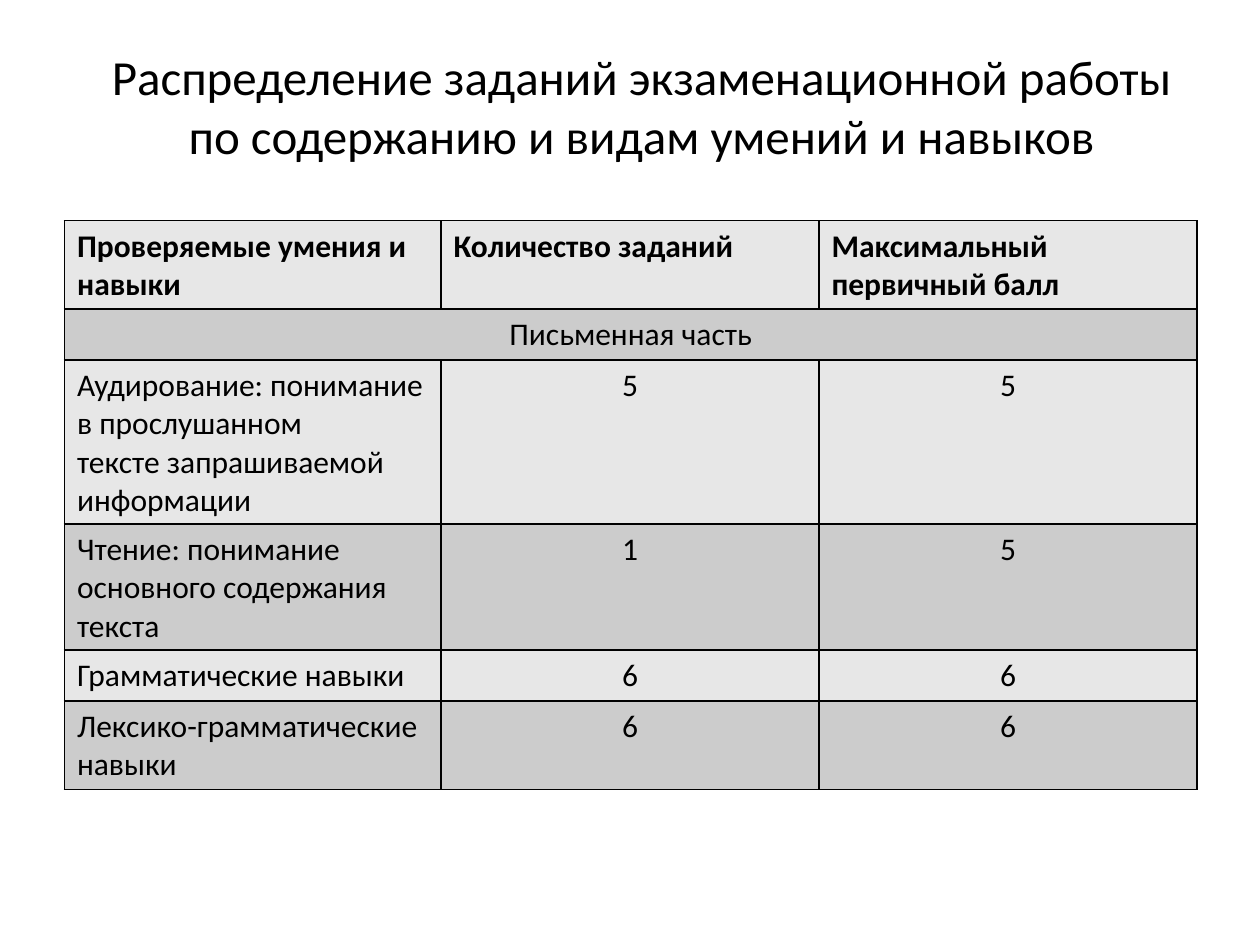
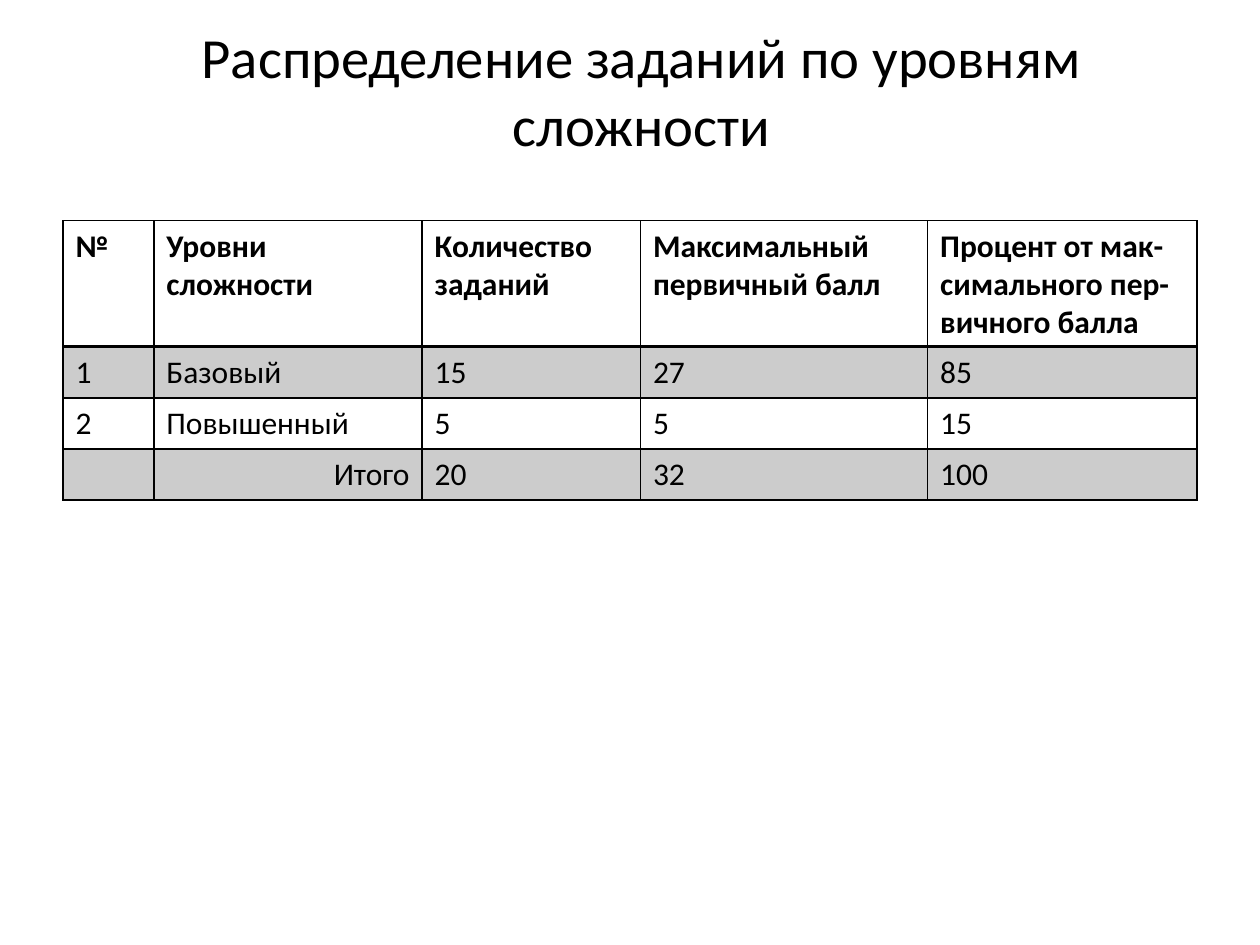
"""Build two slides on how exam tasks are spread by skill and by level."""
from dataclasses import dataclass, field

from lxml.etree import SubElement
from pptx import Presentation
from pptx.dml.color import RGBColor
from pptx.enum.text import MSO_ANCHOR, PP_ALIGN
from pptx.oxml.ns import qn
from pptx.slide import Slide
from pptx.table import _Cell
from pptx.text.text import TextFrame
from pptx.util import Cm, Pt

HUES = {"ink": "000000", "light": "E7E7E7", "dark": "CCCCCC"}
FONT = "Calibri"
ROW = 1.03


@dataclass
class Title:
    text: str
    top: float
    size: float


@dataclass
class Grid:
    left: float
    cols: list[float]
    rows: list[list[str]]
    fills: list[str | None]
    high: float
    rule: float = 1
    wide: list[int] = field(default_factory=list)
    sides: dict[tuple[int, int], PP_ALIGN] = field(default_factory=dict)


def write(frame: TextFrame, text: str, *, size: float = 18, bold: bool = False,
          side: PP_ALIGN = PP_ALIGN.LEFT) -> None:
    for num, line in enumerate(text.split("\n")):
        para = frame.add_paragraph() if num else frame.paragraphs[0]
        para.text = line
        para.alignment = side
        for run in para.runs:
            run.font.name = FONT
            run.font.size = Pt(size)
            run.font.bold = bold
            run.font.color.rgb = RGBColor.from_string(HUES["ink"])


def edge(cell: _Cell, over: float, under: float) -> None:
    props = cell._tc.get_or_add_tcPr()
    for tag, width in (("lnL", 1), ("lnR", 1), ("lnT", over), ("lnB", under)):
        line = SubElement(props, qn(f"a:{tag}"), w=str(Pt(width)))
        fill = SubElement(line, qn("a:solidFill"))
        SubElement(fill, qn("a:srgbClr"), val=HUES["ink"])


def paint(cell: _Cell, hue: str | None) -> None:
    if hue:
        cell.fill.solid()
        cell.fill.fore_color.rgb = RGBColor.from_string(HUES[hue])
    else:
        cell.fill.background()


def draw_title(slide: Slide, title: Title) -> None:
    box = slide.shapes.add_textbox(Cm(1.5), Cm(title.top), Cm(22.86), Cm(3.18))
    box.text_frame.word_wrap = True
    box.text_frame.vertical_anchor = MSO_ANCHOR.MIDDLE
    write(box.text_frame, title.text, size=title.size, side=PP_ALIGN.CENTER)


def draw_grid(slide: Slide, grid: Grid) -> None:
    frame = slide.shapes.add_table(
        len(grid.rows), len(grid.cols), Cm(grid.left), Cm(4.45),
        Cm(sum(grid.cols)), Cm(ROW * len(grid.rows)))
    table = frame.table
    table.horz_banding = False
    for col, width in zip(table.columns, grid.cols):
        col.width = Cm(width)
    for row, texts in enumerate(grid.rows):
        table.rows[row].height = Cm(ROW)
        for col in range(len(grid.cols)):
            cell = table.cell(row, col)
            edge(cell, grid.rule if row == 1 else 1, grid.rule if row == 0 else 1)
            paint(cell, grid.fills[row])
        for col, text in enumerate(texts):
            write(table.cell(row, col).text_frame, text, bold=row == 0,
                  side=grid.sides.get((row, col), PP_ALIGN.LEFT))
    for row in grid.wide:
        table.cell(row, 0).merge(table.cell(row, len(grid.cols) - 1))
    frame.height = Cm(grid.high)


SKILLS = Grid(
    left=1.3, cols=[7.59, 7.62, 7.62], high=11.46, wide=[1],
    fills=["light", "dark"] * 3,
    sides={(1, 0): PP_ALIGN.CENTER}
    | {(row, col): PP_ALIGN.CENTER for row in range(2, 6) for col in (1, 2)},
    rows=[
        ["Проверяемые умения и навыки", "Количество заданий",
         "Максимальный первичный балл"],
        ["Письменная часть"],
        ["Аудирование: понимание в прослушанном\n"
         "тексте запрашиваемой информации", "5", "5"],
        ["Чтение: понимание основного содержания\nтекста", "1", "5"],
        ["Грамматические навыки", "6", "6"],
        ["Лексико-грамматические навыки", "6", "6"],
    ])

LEVELS = Grid(
    left=1.27, cols=[1.83, 5.41, 4.4, 5.79, 5.43], high=5.64, rule=2,
    fills=[None, "dark"] * 2,
    sides={(3, 1): PP_ALIGN.RIGHT},
    rows=[
        ["№", "Уровни сложности", "Количество\nзаданий",
         "Максимальный\nпервичный балл",
         "Процент от мак-\nсимального пер-\nвичного балла"],
        ["1", "Базовый", "15", "27", "85"],
        ["2", "Повышенный", "5", "5", "15"],
        ["", "Итого", "20", "32", "100"],
    ])

PAGES = [
    (Title("Распределение заданий экзаменационной работы\v"
           "по содержанию и видам умений и навыков", 0.53, 28), SKILLS),
    (Title("Распределение заданий по уровням сложности", 0.22, 32.4), LEVELS),
]


def main() -> None:
    deck = Presentation()
    deck.slide_width, deck.slide_height = Cm(25.4), Cm(19.05)
    for title, grid in PAGES:
        slide = deck.slides.add_slide(deck.slide_layouts[6])
        draw_title(slide, title)
        draw_grid(slide, grid)
    deck.save("out.pptx")


if __name__ == "__main__":
    main()
